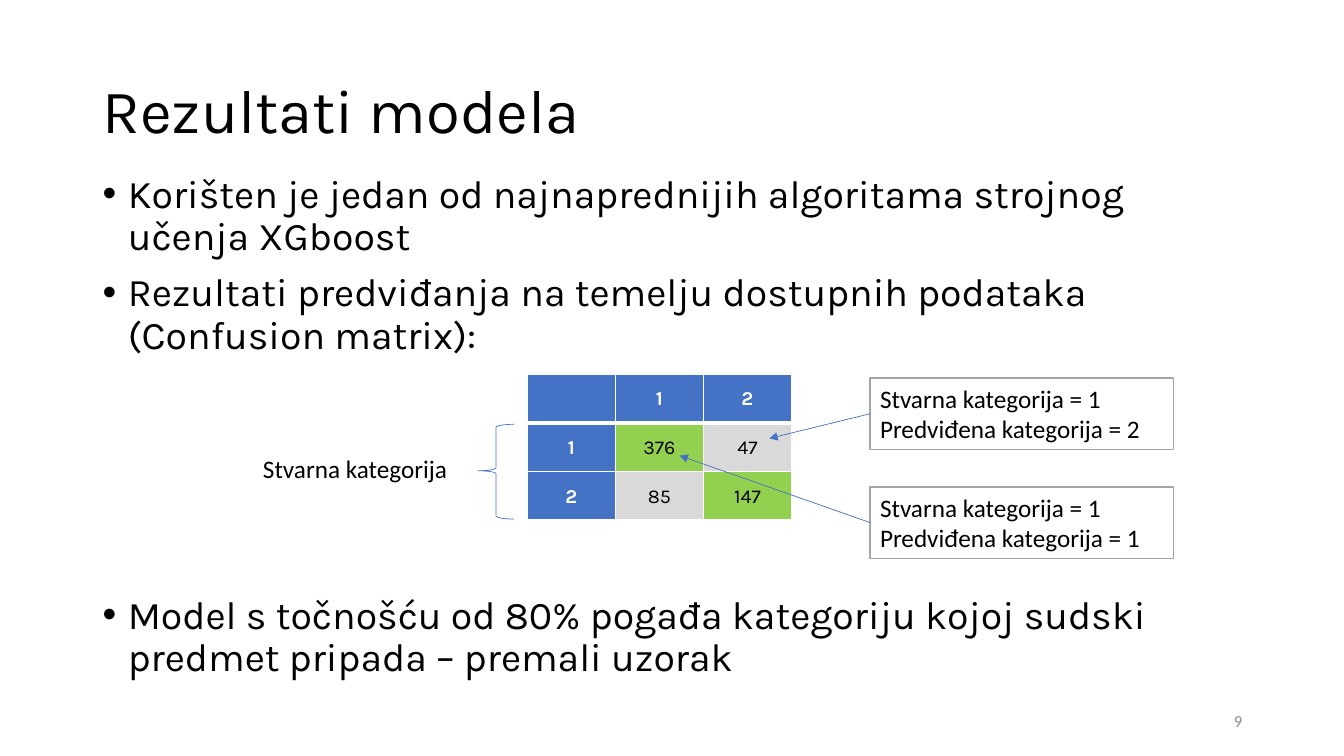
import pptx
import pptx.dml.color
import pptx.enum.shapes
import pptx.enum.text
import pptx.oxml
import pptx.oxml.ns
import pptx.util
from dataclasses import dataclass

Inches = pptx.util.Inches
Pt = pptx.util.Pt
ALIGN = pptx.enum.text.PP_ALIGN
ANCHOR = pptx.enum.text.MSO_ANCHOR
SHAPE = pptx.enum.shapes.MSO_SHAPE


@dataclass(frozen=True)
class Theme:
    """Colours, fonts and type sizes of the slide."""
    white: str = "FFFFFF"
    black: str = "000000"
    blue: str = "4472C4"
    green: str = "92D050"
    light_grey: str = "D9D9D9"
    border_grey: str = "A5A5A5"
    number_grey: str = "8C8C8C"
    main_font: str = "Karla"
    label_font: str = "Calibri"
    title_size: int = 44
    body_size: int = 28
    label_size: int = 18
    table_size: int = 14
    number_size: int = 12


THEME = Theme()


def rgb(value):
    """Return a colour object for a hex value."""
    return pptx.dml.color.RGBColor.from_string(value)


def apply(target, values):
    """Set attributes of a target from a dict."""
    for name, value in values.items():
        setattr(target, name, value)


def add_xml(parent, tag, content="", attributes=""):
    """Append a drawing element to a parent."""
    namespace = pptx.oxml.ns.nsdecls("a")
    parent.append(pptx.oxml.parse_xml(
        f"<a:{tag} {namespace} {attributes}>{content}</a:{tag}>"))


def write_text(frame, lines, size, font=THEME.main_font, color=THEME.black,
               bold=False, **paragraph_format):
    """Fill a text frame with one formatted paragraph per line."""
    frame.word_wrap = True
    for index, line in enumerate(lines):
        paragraph = frame.paragraphs[0] if index == 0 else frame.add_paragraph()
        apply(paragraph, {"alignment": ALIGN.LEFT, **paragraph_format})
        run = paragraph.add_run()
        run.text = line
        apply(run.font, {"name": font, "size": Pt(size), "bold": bold})
        run.font.color.rgb = rgb(color)


def add_text(slide, box, lines, size, anchor=ANCHOR.MIDDLE, **text_format):
    """Add a text box and return its text frame."""
    frame = slide.shapes.add_textbox(*map(Inches, box)).text_frame
    frame.vertical_anchor = anchor
    write_text(frame, lines, size, **text_format)
    return frame


def add_bullets(slide, box, lines, last_gap):
    """Add the bullet list, with a wider gap above its last item."""
    frame = add_text(slide, box, lines, THEME.body_size, ANCHOR.TOP,
                     line_spacing=0.9, space_before=Pt(10))
    for paragraph in frame.paragraphs:
        properties = paragraph._p.get_or_add_pPr()
        properties.set("marL", str(Inches(0.25)))
        properties.set("indent", str(-Inches(0.25)))
        add_xml(properties, "buFont", attributes='typeface="Arial"')
        add_xml(properties, "buChar", attributes='char="•"')
    frame.paragraphs[-1].space_before = Pt(last_gap)


def add_box(slide, box, lines, border=None):
    """Add a white rectangle with label text."""
    shape = slide.shapes.add_shape(SHAPE.RECTANGLE, *map(Inches, box))
    shape.shadow.inherit = False
    shape.fill.solid()
    shape.fill.fore_color.rgb = rgb(THEME.white)
    if border:
        shape.line.color.rgb = rgb(border)
        shape.line.width = Pt(1)
    else:
        shape.line.fill.background()
    shape.text_frame.vertical_anchor = ANCHOR.TOP
    write_text(shape.text_frame, lines, THEME.label_size, THEME.label_font)
    return shape


def add_arrow(slide, box, target):
    """Draw an arrow from the left side of a box to a table cell."""
    x, y = map(Inches, target)
    arrow = slide.shapes.add_connector(
        pptx.enum.shapes.MSO_CONNECTOR.STRAIGHT, box.left, box.top, x, y)
    arrow.begin_connect(box, 1)
    arrow.line.color.rgb = rgb(THEME.blue)
    arrow.line.width = Pt(0.5)
    add_xml(arrow.line._get_or_add_ln(), "tailEnd", attributes='type="triangle"')
    add_xml(arrow._element.spPr, "effectLst")


def add_brace(slide, box):
    """Add the brace that spans the rows of actual categories."""
    brace = slide.shapes.add_shape(SHAPE.LEFT_BRACE, *map(Inches, box))
    brace.shadow.inherit = False
    brace.fill.background()
    brace.line.color.rgb = rgb(THEME.blue)
    brace.line.width = Pt(0.5)
    brace.adjustments[1] = 0.49


def format_cell(cell, text, row, column):
    """Write one matrix cell with its borders and fill."""
    heading = row == 0 or column == 0
    widths = {"lnL": 1, "lnR": 1, "lnT": 3 if row == 1 else 1,
              "lnB": 3 if row == 0 else 1}
    line_fill = f'<a:solidFill><a:srgbClr val="{THEME.white}"/></a:solidFill>'
    for side, width in widths.items():
        add_xml(cell._tc.get_or_add_tcPr(), side, line_fill, f'w="{Pt(width)}"')
    match_fill = THEME.green if row == column else THEME.light_grey
    cell.fill.solid()
    cell.fill.fore_color.rgb = rgb(THEME.blue if heading else match_fill)
    apply(cell, {"vertical_anchor": ANCHOR.MIDDLE,
                 "margin_left": Inches(0.07), "margin_right": Inches(0.07),
                 "margin_top": 0, "margin_bottom": 0})
    if text:
        write_text(cell.text_frame, [text], THEME.table_size,
                   color=THEME.white if heading else THEME.black,
                   bold=heading, alignment=ALIGN.CENTER, line_spacing=1.07)


def add_matrix(slide, box, rows):
    """Add the confusion matrix as a table."""
    table = slide.shapes.add_table(
        len(rows), len(rows[0]), *map(Inches, box)).table
    for row, values in enumerate(rows):
        for column, text in enumerate(values):
            format_cell(table.cell(row, column), text, row, column)


def main():
    """Build the slide and save it."""
    presentation = pptx.Presentation()
    apply(presentation, {"slide_width": Inches(13.33), "slide_height": Inches(7.5)})
    slide = presentation.slides.add_slide(presentation.slide_layouts[6])
    add_text(slide, (0.92, 0.4, 11.5, 1.45), ["Rezultati modela"],
             THEME.title_size, line_spacing=0.9)
    add_bullets(slide, (0.92, 1.68, 11.5, 5.34), [
        "Korišten je jedan od najnaprednijih algoritama strojnog učenja XGboost",
        "Rezultati predviđanja na temelju dostupnih podataka (Confusion matrix):",
        "Model s točnošću od 80% pogađa kategoriju kojoj sudski predmet "
        "pripada – premali uzorak",
    ], last_gap=170)
    add_matrix(slide, (5.23, 3.71, 2.62, 1.45),
               [("", "1", "2"), ("1", "376", "47"), ("2", "85", "147")])
    for top, predicted, target in ((3.75, 2, (7.63, 4.35)), (4.83, 1, (6.74, 4.52))):
        lines = ["Stvarna kategorija = 1", f"Predviđena kategorija = {predicted}"]
        callout = add_box(slide, (8.63, top, 3.01, 0.71), lines, THEME.border_grey)
        add_arrow(slide, callout, target)
    add_box(slide, (2.51, 4.45, 2.11, 0.4), ["Stvarna kategorija"])
    add_brace(slide, (4.74, 4.21, 0.36, 0.94))
    add_text(slide, (9.42, 6.95, 3, 0.4), ["9"], THEME.number_size,
             font=THEME.label_font, color=THEME.number_grey, alignment=ALIGN.RIGHT)
    presentation.save("out.pptx")


if __name__ == "__main__":
    main()
